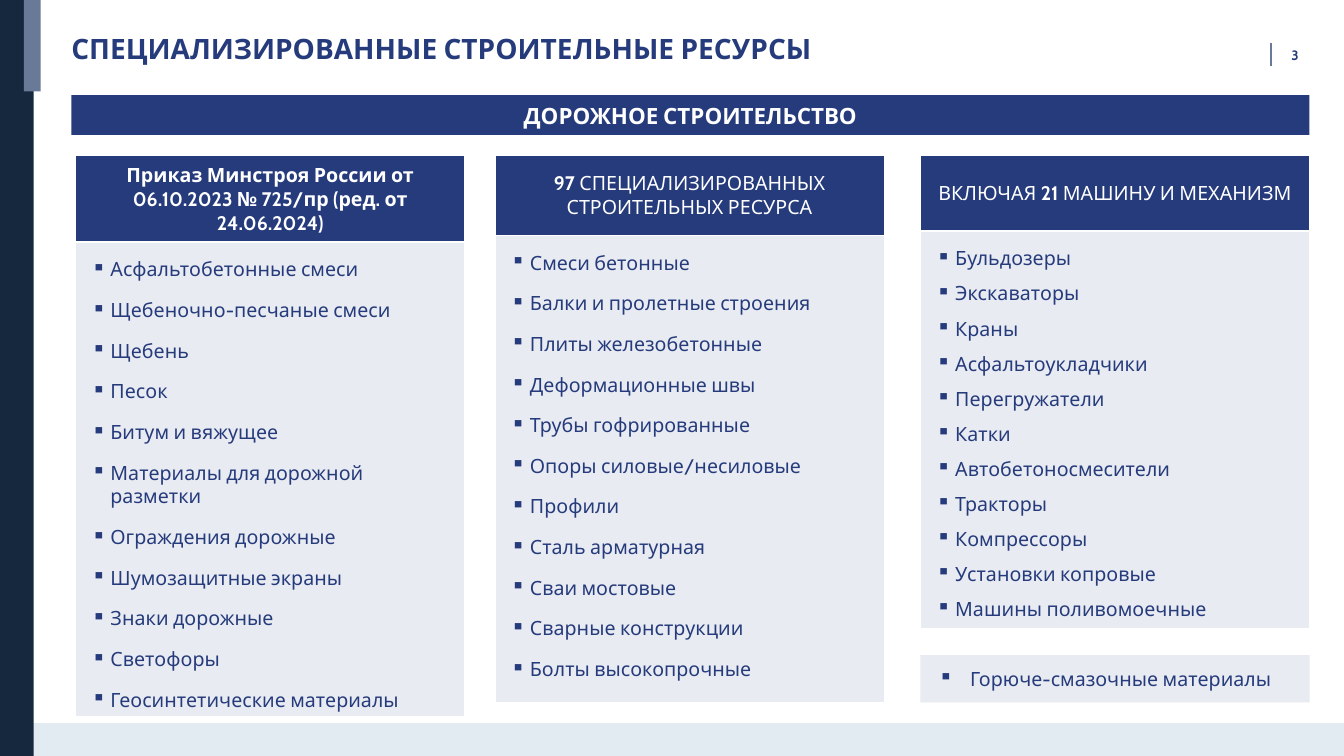
from lxml import etree
from pptx import Presentation
from pptx.dml.color import RGBColor
from pptx.enum.shapes import MSO_CONNECTOR, MSO_SHAPE
from pptx.enum.text import MSO_ANCHOR, MSO_AUTO_SIZE, PP_ALIGN
from pptx.oxml.ns import qn
from pptx.util import Pt

RECT = MSO_SHAPE.RECTANGLE
STRAIGHT = MSO_CONNECTOR.STRAIGHT
MIDDLE, TOP = MSO_ANCHOR.MIDDLE, MSO_ANCHOR.TOP
LEFT, CENTER = PP_ALIGN.LEFT, PP_ALIGN.CENTER

FONT = "Cabin"
COLORS = {
    "navy": "253B7B", "pale": "E9EBF2", "white": "FFFFFF",
    "dark": "15283D", "slate": "697A98", "footer": "E3EBF2",
}

W, H = 960, 540
CONTENT_LEFT = 51
CONTENT_RIGHT = 935.3
COLUMN_TOP, COLUMN_W = 111, 278

# Each column: left, header height, body height, space after items,
# body anchor, header runs (text, bold), items
COLUMNS = [
    (54, 57, 335, 12, TOP,
     [("Приказ Минстроя России от 06.10.2023 № 725/пр (ред. от 24.06.2024)", True)],
     ["Асфальтобетонные смеси", "Щебеночно-песчаные смеси", "Щебень", "Песок",
      "Битум и вяжущее", "Материалы для дорожной разметки", "Ограждения дорожные",
      "Шумозащитные экраны", "Знаки дорожные", "Светофоры",
      "Геосинтетические материалы"]),
    (353.6, 57, 334, 12, TOP,
     [("97 ", True), ("СПЕЦИАЛИЗИРОВАННЫХ СТРОИТЕЛЬНЫХ РЕСУРСА", False)],
     ["Смеси бетонные", "Балки и пролетные строения", "Плиты железобетонные",
      "Деформационные швы", "Трубы гофрированные", "Опоры силовые/несиловые",
      "Профили", "Сталь арматурная", "Сваи мостовые", "Сварные конструкции",
      "Болты высокопрочные"]),
    (657.4, 54, 284, 8, MIDDLE,
     [("ВКЛЮЧАЯ ", False), ("21 ", True), ("МАШИНУ И МЕХАНИЗМ", False)],
     ["Бульдозеры", "Экскаваторы", "Краны", "Асфальтоукладчики", "Перегружатели",
      "Катки", "Автобетоносмесители", "Тракторы", "Компрессоры",
      "Установки копровые", "Машины поливомоечные"]),
]


def rgb(name):
    return RGBColor.from_string(COLORS[name])


def add_run(p, text, size, color, bold=False):
    r = p.add_run()
    r.text = text
    r.font.name = FONT
    r.font.size = Pt(size)
    r.font.bold = bold
    r.font.color.rgb = rgb(color)


def set_bullet(p, indent):
    pPr = p._p.get_or_add_pPr()
    pPr.set("marL", str(Pt(indent)))
    pPr.set("indent", str(-Pt(indent)))
    etree.SubElement(pPr, qn("a:buChar")).set("char", "▪")


def set_margins(box, left, top, right, bottom):
    box.margin_left, box.margin_top = Pt(left), Pt(top)
    box.margin_right, box.margin_bottom = Pt(right), Pt(bottom)


def add_rect(s, x, y, w, h, color):
    sp = s.shapes.add_shape(RECT, Pt(x), Pt(y), Pt(w), Pt(h))
    sp.shadow.inherit = False
    sp.fill.solid()
    sp.fill.fore_color.rgb = rgb(color)
    sp.line.fill.background()
    return sp


def add_frame(s):
    # Footer band, side bar and its tab
    add_rect(s, 0, 516.5, W, H - 516.5, "footer")
    add_rect(s, 0, 0, 24, H, "dark")
    add_rect(s, 17, 0, 12, 65.3, "slate")


def add_page_number(s, x, y, number):
    line = s.shapes.add_connector(STRAIGHT, Pt(x), Pt(y), Pt(x), Pt(y + 16.5))
    line.line.color.rgb = rgb("slate")
    line.line.width = Pt(1)
    etree.SubElement(line._element.spPr, qn("a:effectLst"))
    tf = s.shapes.add_textbox(Pt(x + 5), Pt(y + 2), Pt(46), Pt(12.5)).text_frame
    tf.word_wrap = True
    tf.vertical_anchor = MIDDLE
    set_margins(tf, 9.4, 0, 7.2, 0)
    add_run(tf.paragraphs[0], number, 9.7, "navy", True)


def add_title(s, x, y, w, h, text):
    sp = s.shapes.title
    sp.left, sp.top, sp.width, sp.height = Pt(x), Pt(y), Pt(w), Pt(h)
    tf = sp.text_frame
    tf.auto_size = MSO_AUTO_SIZE.NONE
    tf.vertical_anchor = MIDDLE
    set_margins(tf, 0, 0, 0, 0)
    p = tf.paragraphs[0]
    p.alignment = LEFT
    add_run(p, text, 20, "navy", True)


def add_panel(s, x, y, w, h, fill):
    tf = add_rect(s, x, y, w, h, fill).text_frame
    tf.word_wrap = True
    tf.vertical_anchor = MIDDLE
    set_margins(tf, 13, 0, 13, 0)
    return tf.paragraphs[0]


def add_banner(s, x, y, w, h, text):
    p = add_panel(s, x, y, w, h, "navy")
    p.alignment = CENTER
    add_run(p, text, 16, "white", True)


def add_extra_item(s, x, y, w, h, text):
    p = add_panel(s, x, y, w, h, "pale")
    p.alignment = LEFT
    set_bullet(p, 22.5)
    add_run(p, text, 14, "navy")


def add_column(s, x, y, w, header_h, body_h, gap, anchor, header, items):
    frame = s.shapes.add_table(2, 1, Pt(x), Pt(y), Pt(w), Pt(header_h + body_h))
    table = frame.table
    table.columns[0].width = Pt(w)
    styles = ((header_h, "navy", 5.7, MIDDLE), (body_h, "pale", 11.4, anchor))
    for i, (height, fill, top, cell_anchor) in enumerate(styles):
        table.rows[i].height = Pt(height)
        cell = table.cell(i, 0)
        cell.fill.solid()
        cell.fill.fore_color.rgb = rgb(fill)
        cell.vertical_anchor = cell_anchor
        set_margins(cell, 11.4, top, 11.4, 5.7)

    # Header
    p = table.cell(0, 0).text_frame.paragraphs[0]
    p.alignment = CENTER
    for text, bold in header:
        add_run(p, text, 14, "white", bold)

    # Bulleted items
    tf = table.cell(1, 0).text_frame
    for i, item in enumerate(items):
        p = tf.add_paragraph() if i else tf.paragraphs[0]
        p.space_after = Pt(gap)
        set_bullet(p, 13.5)
        add_run(p, item, 14, "navy")


def main():
    prs = Presentation()
    prs.slide_width, prs.slide_height = Pt(W), Pt(H)
    s = prs.slides.add_slide(prs.slide_layouts[5])
    add_frame(s)
    add_title(s, CONTENT_LEFT, 22.5, 746, 24.5, "СПЕЦИАЛИЗИРОВАННЫЕ СТРОИТЕЛЬНЫЕ РЕСУРСЫ")
    add_page_number(s, 908, 31, "3")
    add_banner(s, CONTENT_LEFT, 68, CONTENT_RIGHT - CONTENT_LEFT, 28.4,
               "ДОРОЖНОЕ СТРОИТЕЛЬСТВО")
    for x, *column in COLUMNS:
        add_column(s, x, COLUMN_TOP, COLUMN_W, *column)
    add_extra_item(s, COLUMNS[-1][0], 468, COLUMN_W, 33.7, "Горюче-смазочные материалы")
    prs.save("out.pptx")


if __name__ == "__main__":
    main()
